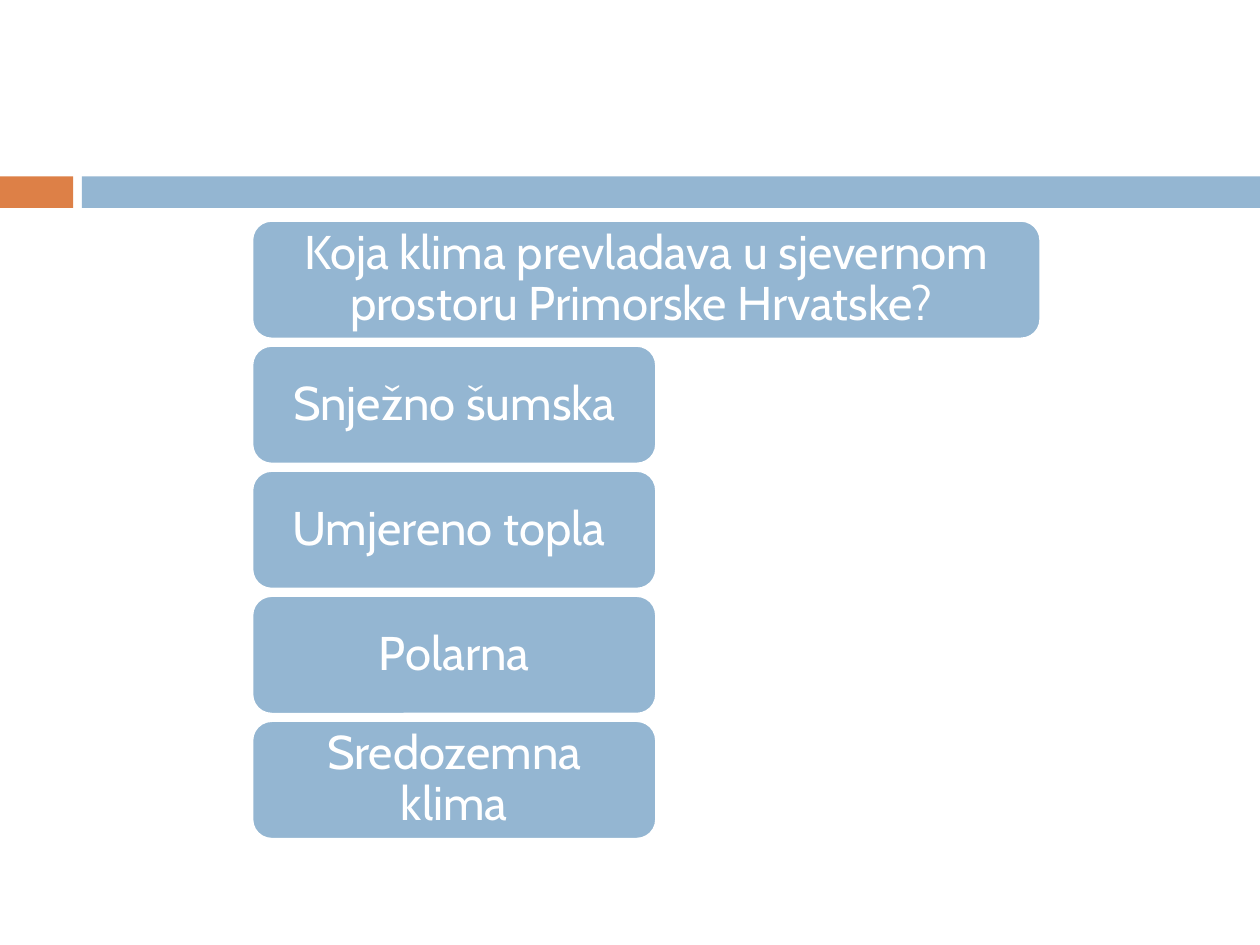
"""Build a quiz slide on the climate of northern Primorska Hrvatska."""
from pptx import Presentation, util as u
from pptx.dml.color import RGBColor
from pptx.enum import shapes, text

BLUE = RGBColor(0x94, 0xB6, 0xD2)
ORANGE = RGBColor(0xDD, 0x80, 0x47)
WHITE = RGBColor(0xFF, 0xFF, 0xFF)

deck = Presentation()
deck.slide_width, deck.slide_height = u.Inches(10), u.Inches(7.5)
slide = deck.slides.add_slide(deck.slide_layouts[6])


def add_block(kind, left, top, width, height, fill):
    block = slide.shapes.add_shape(kind, *map(u.Inches, (left, top, width, height)))
    block.shadow.inherit = False
    block.fill.solid()
    block.fill.fore_color.rgb = fill
    block.line.fill.background()
    return block


def write(block, wording, size=27, font="Cabin", color=WHITE, spacing=0.9):
    frame = block.text_frame
    frame.word_wrap = True
    frame.vertical_anchor = text.MSO_ANCHOR.MIDDLE
    frame.margin_left = frame.margin_right = u.Inches(0.11)
    frame.margin_top = frame.margin_bottom = u.Inches(0.06)
    paragraph = frame.paragraphs[0]
    paragraph.alignment = text.PP_ALIGN.CENTER
    paragraph.line_spacing = spacing
    run = paragraph.add_run()
    run.text = wording
    run.font.size = u.Pt(size)
    run.font.name = font
    run.font.color.rgb = color


for left, width, fill in ((0, 0.58, ORANGE), (0.65, 9.35, BLUE)):
    add_block(shapes.MSO_SHAPE.RECTANGLE, left, 1.4, width, 0.25, fill)

question = "Koja klima prevladava u sjevernom prostoru Primorske Hrvatske? "
answers = ["Snježno šumska", "Umjereno topla ", "Polarna", "Sredozemna klima"]
first_row, last_row = 1.75, 5.72
row_pitch = (last_row - first_row) / len(answers)

for row, wording in enumerate([question, *answers]):
    width = 6.26 if wording == question else 3.21
    card = add_block(shapes.MSO_SHAPE.ROUNDED_RECTANGLE,
                     2, first_row + row * row_pitch, width, 0.94, BLUE)
    card.line.color.rgb = WHITE
    card.line.width = u.Pt(1.5)
    write(card, wording)

deck.save("out.pptx")
